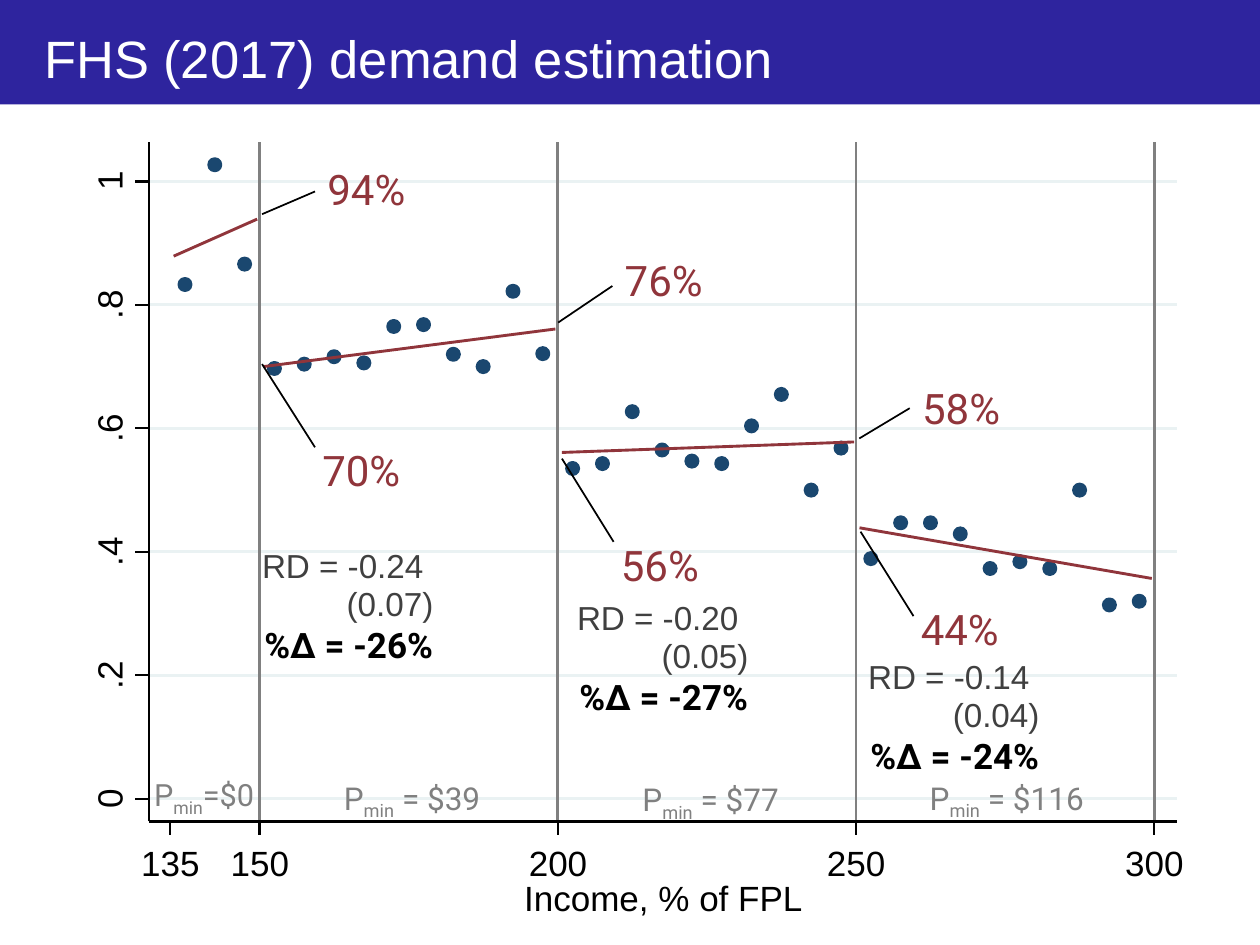
from lxml.etree import SubElement
from pptx import Presentation
from pptx.dml.color import RGBColor
from pptx.enum.shapes import MSO_CONNECTOR, MSO_SHAPE
from pptx.enum.text import MSO_ANCHOR, MSO_AUTO_SIZE, PP_ALIGN
from pptx.oxml.ns import qn
from pptx.util import Inches, Pt

COLORS = {
    "header": "2E249E", "white": "FFFFFF", "black": "000000", "grid": "EAF2F3",
    "cutoff": "808080", "dot": "1A476F", "fit": "90353B", "estimate": "404040",
}
COLUMNS, ROWS = 100, 75  # grid over the whole slide
PLOT_LEFT, PLOT_TOP, PLOT_RIGHT, PLOT_BOTTOM = 11.8, 11.3, 93.4, 65.2

CUTOFFS = [150, 200, 250, 300]
SHARE_LABELS = {0: "0", 20: ".2", 40: ".4", 60: ".6", 80: ".8", 100: "1"}
FIRST_BIN, BIN_WIDTH = 137.5, 5
ENROLLED = [  # percent enrolled in each income bin
    83.3, 102.7, 86.6,
    69.7, 70.4, 71.6, 70.6, 76.5, 76.8, 72, 70, 82.2, 72.1,
    53.5, 54.3, 62.7, 56.5, 54.7, 54.3, 60.4, 65.5, 50, 56.8,
    38.9, 44.7, 44.7, 42.9, 37.3, 38.4, 37.3, 50, 31.4, 32,
]
FITS = [  # start income, start percent, end income, end percent
    (135.6, 87.9, 149.6, 93.9), (150.6, 70, 199.6, 76.1),
    (200.7, 56.1, 249.7, 57.8), (250.6, 43.9, 299.6, 35.7),
]
CALLOUTS = [  # text, left and top of text, line start, line end
    ("94%", 25, 12.5, (20.8, 17), (25, 15.2)),
    ("76%", 48.6, 19.7, (44.3, 25.6), (48.6, 22.7)),
    ("58%", 72.2, 29.9, (68.2, 34.8), (72.2, 32.4)),
    ("70%", 24.6, 34.8, (20.8, 28.9), (25, 35.5)),
    ("56%", 48.3, 42.3, (44.6, 36.4), (48.7, 43)),
    ("44%", 72.1, 47.4, (68.3, 42.2), (72.5, 48.9)),
]
ESTIMATES = [  # left, top, discontinuity, standard error, percent change
    (20.8, 43.3, "-0.24", "0.07", "-26%"),
    (45.8, 47.4, "-0.20", "0.05", "-27%"),
    (68.9, 52.1, "-0.14", "0.04", "-24%"),
]
PREMIUMS = [  # left, top, width, text size, amount
    (20.6, 61.3, 24.2, 18, " = $39"), (44.3, 61.4, 24.2, 18, " = $77"),
    (67.8, 61.3, 24.2, 18, " = $116"), (9.6, 61.1, 13.2, 17.5, "=$0"),
]


def income_column(income):
    return 20.6 + (income - 150) * 71 / 150


def share_row(percent):
    return 63.4 - 0.49 * percent


class SlideBuilder:
    """Draws styled elements on one slide, with lengths in grid columns and rows."""

    def __init__(self, presentation):
        self.slide = presentation.slides.add_slide(presentation.slide_layouts[5])
        self.shapes = self.slide.shapes
        self.column = presentation.slide_width / COLUMNS
        self.row = presentation.slide_height / ROWS

    def across(self, columns):
        return round(columns * self.column)

    def down(self, rows):
        return round(rows * self.row)

    def box(self, left, top, width, height):
        return self.across(left), self.down(top), self.across(width), self.down(height)

    def color(self, name):
        return RGBColor.from_string(COLORS[name])

    def add_text(self, paragraph, text, size, color, font="Arial", bold=False, baseline=0):
        run = paragraph.add_run()
        run.text = text
        run.font.size, run.font.name, run.font.bold = Pt(size), font, bold
        run.font.color.rgb = self.color(color)
        if baseline:
            run._r.get_or_add_rPr().set("baseline", str(baseline * 1000))

    def title(self, text):
        title = self.shapes.title
        title.left, title.top, title.width, title.height = self.box(2.5, 1.7, 95.8, 5.8)
        title.text_frame.vertical_anchor = MSO_ANCHOR.MIDDLE
        paragraph = title.text_frame.paragraphs[0]
        paragraph.alignment = PP_ALIGN.LEFT
        self.add_text(paragraph, text, 30, "white")

    def shape(self, kind, area, fill, outline=None):
        shape = self.shapes.add_shape(kind, *self.box(*area))
        shape.shadow.inherit = False
        shape.fill.solid()
        shape.fill.fore_color.rgb = self.color(fill)
        if outline:
            shape.line.color.rgb = self.color(fill)
            shape.line.width = Pt(outline)
        else:
            shape.line.fill.background()
        return shape

    def line(self, start, end, color="black", width=1.25):
        line = self.shapes.add_connector(
            MSO_CONNECTOR.STRAIGHT, self.across(start[0]), self.down(start[1]),
            self.across(end[0]), self.down(end[1]))
        line.line.color.rgb = self.color(color)
        line.line.width = Pt(width)
        SubElement(line.element.spPr, qn("a:effectLst"))

    def fit(self, start, end):
        builder = self.shapes.build_freeform(self.across(start[0]), self.down(start[1]))
        builder.add_line_segments([(self.across(end[0]), self.down(end[1]))], close=False)
        curve = builder.convert_to_shape()
        curve.shadow.inherit = False
        curve.fill.background()
        curve.line.color.rgb = self.color("fit")
        curve.line.width = Pt(1.63)

    def text_box(self, area, align=PP_ALIGN.LEFT, margins=True, wrap=True, rotation=0):
        """Adds an empty text box and returns its paragraph."""
        box = self.shapes.add_textbox(*self.box(*area))
        box.rotation = rotation
        frame = box.text_frame
        frame.word_wrap = wrap
        frame.auto_size = MSO_AUTO_SIZE.SHAPE_TO_FIT_TEXT
        if not margins:
            frame.margin_left = frame.margin_right = 0
            frame.margin_top = frame.margin_bottom = 0
        paragraph = frame.paragraphs[0]
        paragraph.alignment = align
        return paragraph

    def axis_label(self, text, area, rotation=0):
        paragraph = self.text_box(area, margins=False, wrap=False, rotation=rotation)
        self.add_text(paragraph, text, 20, "black")

    def callout(self, text, left, top, start, end):
        self.add_text(self.text_box((left, top, 10, 5)), text, 24, "fit", "Roboto")
        self.line(start, end, width=1)

    def estimate(self, left, top, difference, error, change):
        paragraph = self.text_box((left, top, 13.6, 3.2), margins=False, wrap=False)
        self.add_text(paragraph, f"RD = {difference}", 19, "estimate")
        paragraph = self.text_box((left, top + 3, 13.6, 3.2), PP_ALIGN.RIGHT, margins=False)
        self.add_text(paragraph, f"({error})", 19, "estimate")
        paragraph = self.text_box((left - 0.8, top + 5.7, 21, 4.4))
        self.add_text(paragraph, f"%Δ = {change}", 20, "black", "Roboto", bold=True)

    def premium(self, left, top, width, size, amount):
        paragraph = self.text_box((left, top, width, 4), PP_ALIGN.CENTER)
        for text, baseline in (("P", 0), ("min", -25), (amount, 0)):
            self.add_text(paragraph, text, size, "cutoff", "Roboto", baseline=baseline)


def draw_plot(builder):
    builder.shape(MSO_SHAPE.RECTANGLE, (4.2, 8.8, 91.7, 66.2), "white")
    builder.shape(MSO_SHAPE.RECTANGLE, (PLOT_LEFT, PLOT_TOP, 81.5, 53.8), "white", 1.25)
    for percent in SHARE_LABELS:
        row = share_row(percent)
        builder.line((PLOT_LEFT, row), (PLOT_RIGHT, row), "grid", 1.63)
    for income in CUTOFFS:
        column = income_column(income)
        builder.line((column, PLOT_BOTTOM), (column, PLOT_TOP), "cutoff", 1.63)
    for number, percent in enumerate(ENROLLED):
        column = income_column(FIRST_BIN + number * BIN_WIDTH)
        area = (column - 0.48, share_row(percent) - 0.48, 0.96, 0.96)
        builder.shape(MSO_SHAPE.OVAL, area, "dot", 1.63)
    for income, percent, last_income, last_percent in FITS:
        builder.fit((income_column(income), share_row(percent)),
                    (income_column(last_income), share_row(last_percent)))


def draw_axes(builder):
    builder.line((PLOT_LEFT, PLOT_BOTTOM), (PLOT_LEFT, PLOT_TOP))
    for percent, label in SHARE_LABELS.items():
        row = share_row(percent)
        builder.line((PLOT_LEFT, row), (PLOT_LEFT - 1.1, row))
        width = 2.8 if len(label) == 1 else 3.6
        builder.axis_label(label, (8.8 - width / 2, row - 2.5, width, 3.7), 270)
    builder.line((PLOT_LEFT, PLOT_BOTTOM), (PLOT_RIGHT, PLOT_BOTTOM))
    for income in [135, *CUTOFFS]:
        column = income_column(income)
        builder.line((column, PLOT_BOTTOM), (column, PLOT_BOTTOM + 1.1))
        builder.axis_label(str(income), (column - 2.3, 66.8, 5.9, 3.7))
    builder.axis_label("Income, % of FPL", (41.6, 69.6, 23.3, 3.7))


def main():
    presentation = Presentation()
    presentation.slide_width, presentation.slide_height = Inches(10), Inches(7.5)
    builder = SlideBuilder(presentation)
    header = builder.shape(MSO_SHAPE.RECTANGLE, (0, 0, COLUMNS, 8.3), "header")
    builder.shapes.title.element.addprevious(header.element)
    builder.title("FHS (2017) demand estimation")
    draw_plot(builder)
    draw_axes(builder)
    for draw, items in ((builder.callout, CALLOUTS), (builder.estimate, ESTIMATES),
                        (builder.premium, PREMIUMS)):
        for item in items:
            draw(*item)
    presentation.save("out.pptx")


if __name__ == "__main__":
    main()
